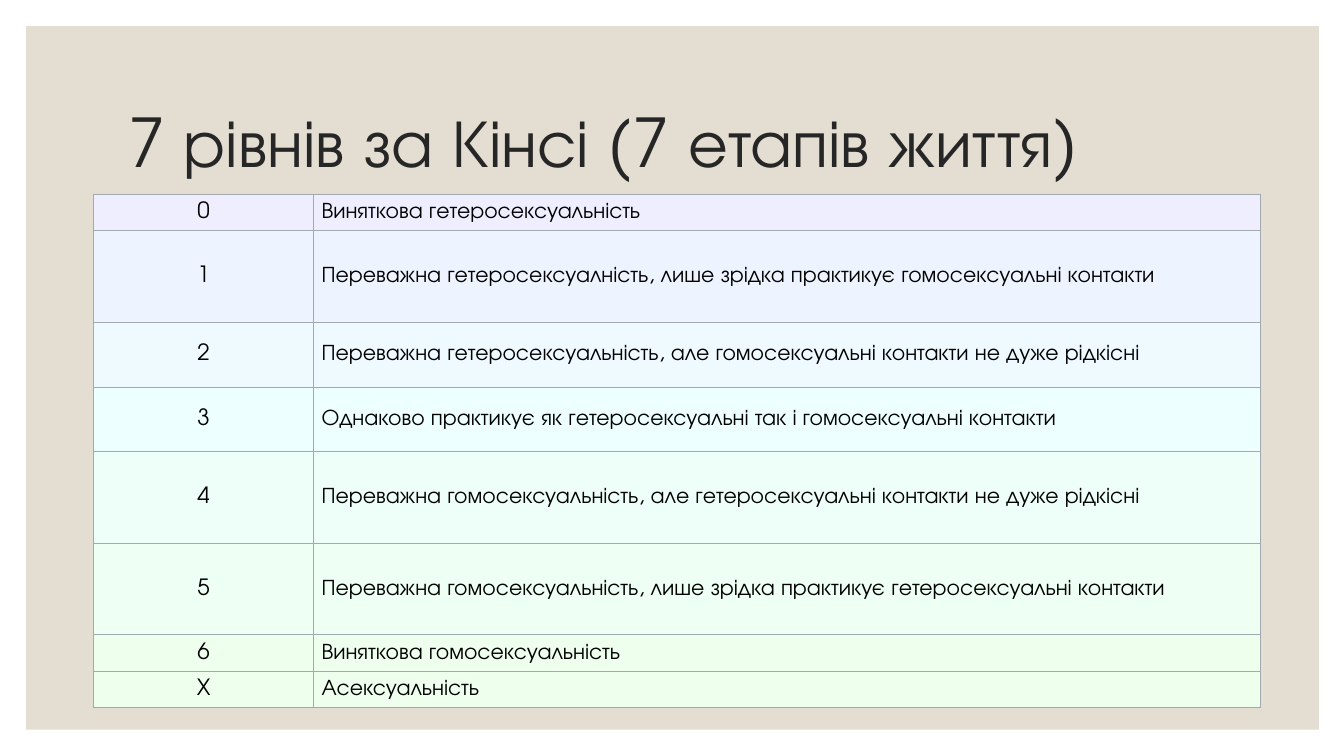
from dataclasses import dataclass

from lxml import etree
from pptx import Presentation
from pptx.dml.color import RGBColor
from pptx.enum.shapes import MSO_SHAPE
from pptx.enum.text import MSO_ANCHOR, PP_ALIGN
from pptx.oxml.ns import qn
from pptx.util import Inches, Pt

RECTANGLE = MSO_SHAPE.RECTANGLE
MIDDLE = MSO_ANCHOR.MIDDLE
LEFT, CENTER = PP_ALIGN.LEFT, PP_ALIGN.CENTER
TITLE_ONLY = 5


@dataclass(frozen=True)
class Theme:
    font: str = "TeX Gyre Adventor"
    title_size: int = 48
    body_size: int = 16
    panel: str = "E3DED1"
    title: str = "262626"
    body: str = "000000"
    border: str = "A2A9B1"
    border_width: float = 0.75


THEME = Theme()

# Level, description, row fill, row height
LEVELS = [
    ("0", "Виняткова гетеросексуальність", "EEEEFF", 0.36),
    ("1", "Переважна гетеросексуалність, лише зрідка практикує гомосексуальні контакти", "EEF4FF", 0.91),
    ("2", "Переважна гетеросексуальність, але гомосексуальні контакти не дуже рідкісні", "EEFAFF", 0.64),
    ("3", "Однаково практикує як гетеросексуальні так і гомосексуальні контакти", "EEFFFF", 0.64),
    ("4", "Переважна гомосексуальність, але гетеросексуальні контакти не дуже рідкісні", "EEFFFA", 0.91),
    ("5", "Переважна гомосексуальність, лише зрідка практикує гетеросексуальні контакти", "EEFFF4", 0.91),
    ("6", "Виняткова гомосексуальність", "EEFFEE", 0.36),
    ("X", "Асексуальність", "EEFFEE", 0.36),
]
LEVEL_SHARE = 2.18 / 11.57


def write(frame, text, size=THEME.body_size, color=THEME.body, align=LEFT, spacing=1.0):
    """Put one formatted paragraph into a text frame."""
    frame.word_wrap = True
    paragraph = frame.paragraphs[0]
    paragraph.alignment = align
    paragraph.line_spacing = spacing
    run = paragraph.add_run()
    run.text = text
    run.font.name = THEME.font
    run.font.size = Pt(size)
    run.font.color.rgb = RGBColor.from_string(color)


def outline_cell(cell):
    properties = cell._tc.get_or_add_tcPr()
    for side in ("a:lnL", "a:lnR", "a:lnT", "a:lnB"):
        line = etree.SubElement(properties, qn(side), w=str(Pt(THEME.border_width)))
        fill = etree.SubElement(line, qn("a:solidFill"))
        etree.SubElement(fill, qn("a:srgbClr"), val=THEME.border)


def add_panel(slide, left, top, width, height):
    panel = slide.shapes.add_shape(
        RECTANGLE, Inches(left), Inches(top), Inches(width), Inches(height))
    panel.shadow.inherit = False
    panel.fill.solid()
    panel.fill.fore_color.rgb = RGBColor.from_string(THEME.panel)
    panel.line.fill.background()
    # Behind the title placeholder
    slide.shapes._spTree.insert(2, panel._element)


def add_title(slide, text, left, top, width, height):
    title = slide.shapes.title
    title.left, title.top = Inches(left), Inches(top)
    title.width, title.height = Inches(width), Inches(height)
    title.text_frame.vertical_anchor = MIDDLE
    write(title.text_frame, text, size=THEME.title_size, color=THEME.title, spacing=0.9)


def add_levels_table(slide, levels, left, top, width):
    height = sum(level[-1] for level in levels)
    table = slide.shapes.add_table(
        len(levels), 2, Inches(left), Inches(top), Inches(width), Inches(height)).table
    table.first_row = table.horz_banding = False
    table.columns[0].width = Inches(width * LEVEL_SHARE)
    table.columns[1].width = Inches(width * (1 - LEVEL_SHARE))

    for row, (level, description, color, row_height) in zip(table.rows, levels):
        row.height = Inches(row_height)
        for cell, text, align in zip(row.cells, (level, description), (CENTER, LEFT)):
            outline_cell(cell)
            cell.fill.solid()
            cell.fill.fore_color.rgb = RGBColor.from_string(color)
            cell.vertical_anchor = MIDDLE
            cell.margin_left = cell.margin_right = Inches(0.08)
            cell.margin_top = cell.margin_bottom = Inches(0.04)
            write(cell.text_frame, text, align=align)


def main():
    presentation = Presentation()
    presentation.slide_width, presentation.slide_height = Inches(13.33), Inches(7.5)
    slide = presentation.slides.add_slide(presentation.slide_layouts[TITLE_ONLY])
    add_panel(slide, 0.26, 0.26, 12.82, 6.98)
    add_title(slide, "7 рівнів за Кінсі (7 етапів життя)", 1.17, 0.7, 11, 1.5)
    add_levels_table(slide, LEVELS, 0.93, 1.93, 11.57)
    presentation.save("out.pptx")


if __name__ == "__main__":
    main()
